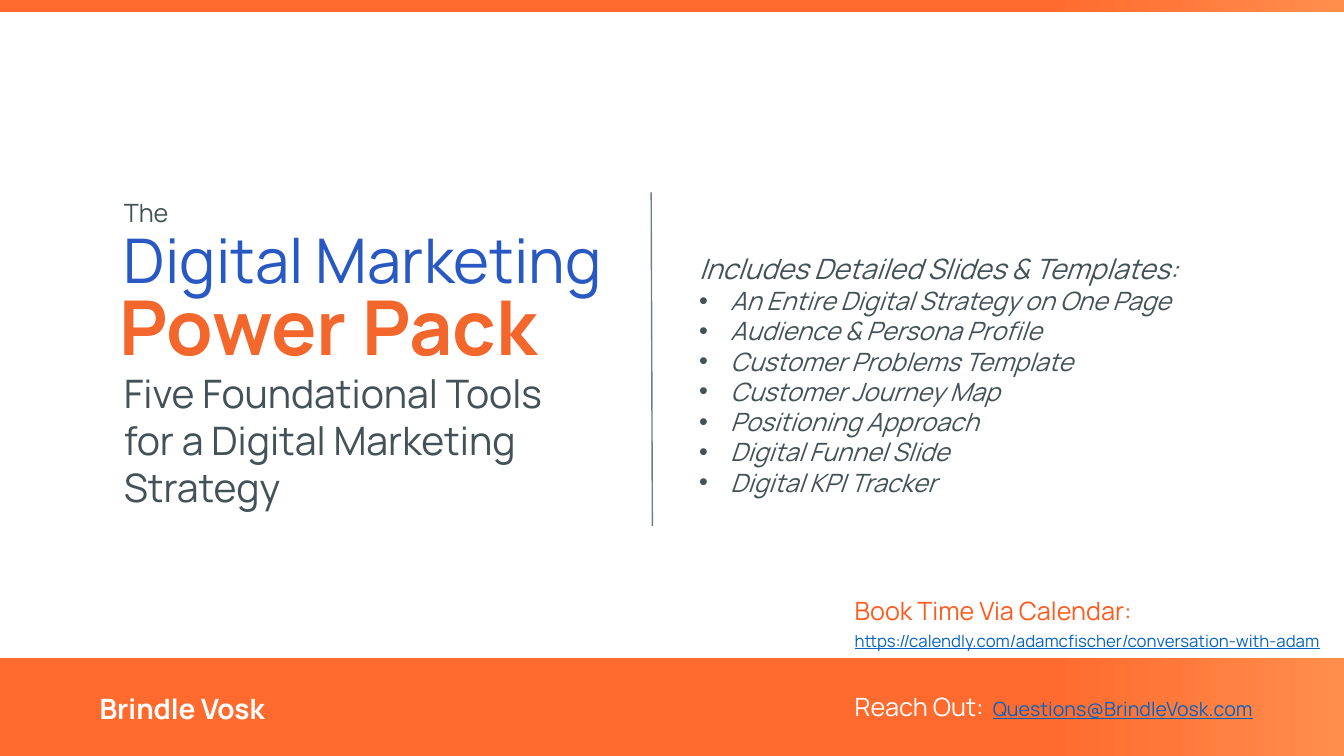
from lxml.etree import SubElement
from pptx import Presentation
from pptx.dml.color import RGBColor
from pptx.enum.shapes import MSO_CONNECTOR, MSO_SHAPE
from pptx.enum.text import MSO_ANCHOR, MSO_AUTO_SIZE, PP_ALIGN
from pptx.oxml.ns import qn
from pptx.util import Cm, Pt

FONT = "Manrope"
COLORS = {
    "slate": "425257",
    "rule": "668188",
    "blue": "2858C2",
    "orange": "F3662C",
    "booking": "FF5B1E",
    "bar_start": "FF6B2E",
    "bar_end": "FF8E4D",
    "link": "0563C1",
    "white": "FFFFFF",
}
TEMPLATES = [
    "An Entire Digital Strategy on One Page",
    "Audience & Persona Profile",
    "Customer Problems Template",
    "Customer Journey Map",
    "Positioning Approach",
    "Digital Funnel Slide",
    "Digital KPI Tracker",
]


def rgb(name):
    """Return the named colour."""
    return RGBColor.from_string(COLORS[name])


def add_span(para, text, size=18, color="slate", bold=False, italic=False, underline=False):
    """Append formatted text to a paragraph."""
    span = para.add_run()
    span.text = text
    font = span.font
    font.name, font.size = FONT, Pt(size)
    font.bold, font.italic, font.underline = bold, italic, underline
    font.color.rgb = rgb(color)


def place(shape, left, top, width, height):
    """Set the bounds of a shape in centimetres."""
    shape.left, shape.top = Cm(left), Cm(top)
    shape.width, shape.height = Cm(width), Cm(height)


def add_box(page, left, top, width, height):
    """Add a wrapping text box and return its frame."""
    box = page.shapes.add_textbox(Cm(left), Cm(top), Cm(width), Cm(height))
    box.text_frame.word_wrap = True
    return box.text_frame


def add_line_of_text(page, box, text, **style):
    """Add a text box with one paragraph and return that paragraph."""
    para = add_box(page, *box).paragraphs[0]
    add_span(para, text, **style)
    return para


def add_bar(page, left, top, width, height):
    """Add an orange gradient bar."""
    bar = page.shapes.add_shape(
        MSO_SHAPE.RECTANGLE, Cm(left), Cm(top), Cm(width), Cm(height))
    bar.shadow.inherit = False
    bar.line.fill.background()
    bar.fill.gradient()
    bar.fill.gradient_angle = 0
    stops = zip(bar.fill.gradient_stops, (0.78, 1), ("bar_start", "bar_end"))
    for stop, position, color in stops:
        stop.position = position
        stop.color.rgb = rgb(color)


def add_divider(page, left, top, width, height):
    """Add the thin rule between the two columns."""
    rule = page.shapes.add_connector(
        MSO_CONNECTOR.STRAIGHT, Cm(left), Cm(top), Cm(left + width), Cm(top + height))
    rule.line.color.rgb = rgb("rule")
    rule.line.width = Pt(1)
    SubElement(rule._element.spPr, qn("a:effectLst"))


def add_heading(page, left, top, width, height):
    """Place the title lines and the subtitle."""
    add_line_of_text(page, (left, top, width, 1.02), "The")
    title = page.shapes.title
    place(title, left, top + 0.61, width, 2)
    frame = title.text_frame
    frame.auto_size = MSO_AUTO_SIZE.NONE
    frame.vertical_anchor = MSO_ANCHOR.TOP
    frame.word_wrap = True
    frame.paragraphs[0].alignment = PP_ALIGN.LEFT
    add_span(frame.paragraphs[0], "Digital Marketing", size=44, color="blue")
    name = add_line_of_text(
        page, (left - 1.37, top + 2.08, width, 2.57), "Power Pack",
        size=54, color="orange", bold=True)
    name.alignment = PP_ALIGN.CENTER
    add_line_of_text(
        page, (left, top + 4.32, 11.66, height - 4.32),
        "Five Foundational Tools for a Digital Marketing Strategy", size=28)


def add_contents(page, left, top, width, height):
    """Place the list of included templates."""
    frame = add_box(page, left, top, width, height)
    add_span(frame.paragraphs[0], "Includes Detailed Slides & Templates:", size=20, italic=True)
    for template in TEMPLATES:
        para = frame.add_paragraph()
        properties = para._p.get_or_add_pPr()
        properties.set("marL", str(Cm(0.79)))
        properties.set("indent", str(-Cm(0.79)))
        SubElement(properties, qn("a:buFont"), typeface="Arial")
        SubElement(properties, qn("a:buChar"), char="•")
        add_span(para, template, italic=True)


def add_booking(page, left, top, width, height):
    """Place the booking label above its address."""
    add_line_of_text(
        page, (left, top, width, 1.02), "Book Time Via Calendar:", color="booking")
    add_line_of_text(
        page, (left, top + 0.89, width, height - 0.89),
        "https://calendly.com/adamcfischer/conversation-with-adam",
        size=12, color="link", underline=True)


def add_footer(page, left, top, width, height):
    """Place the footer bar with the sender and the contact address."""
    add_bar(page, left, top, width, height)
    sender = add_box(page, left + 2, top + 0.61, 9, 1.3)
    sender.vertical_anchor = MSO_ANCHOR.MIDDLE
    sender.margin_left = sender.margin_right = Cm(0.51)
    add_span(sender.paragraphs[0], "Brindle Vosk", size=20, color="white", bold=True)
    contact = add_box(page, left + 21.29, top + 0.71, width - 21.29, 1.02).paragraphs[0]
    tabs = SubElement(contact._p.get_or_add_pPr(), qn("a:tabLst"))
    SubElement(tabs, qn("a:tab"), pos=str(Cm(3.48)), algn="l")
    add_span(contact, "Reach Out:\t", color="white")
    add_span(contact, "Questions@BrindleVosk.com", size=14, color="link", underline=True)


def main():
    """Build and save the deck."""
    deck = Presentation()
    deck.slide_width, deck.slide_height = Cm(33.87), Cm(19.05)
    page = deck.slides.add_slide(deck.slide_layouts.get_by_name("Title Only"))
    add_bar(page, 0, 0, 33.87, 0.31)
    add_divider(page, 16.41, 4.85, 0.03, 8.41)
    add_heading(page, 2.87, 4.85, 13.54, 9)
    add_contents(page, 17.37, 6.22, 16.4, 7.85)
    add_footer(page, 0, 16.59, 33.87, 2.46)
    add_booking(page, 21.29, 14.88, 12.58, 1.65)
    deck.save("out.pptx")


if __name__ == "__main__":
    main()
